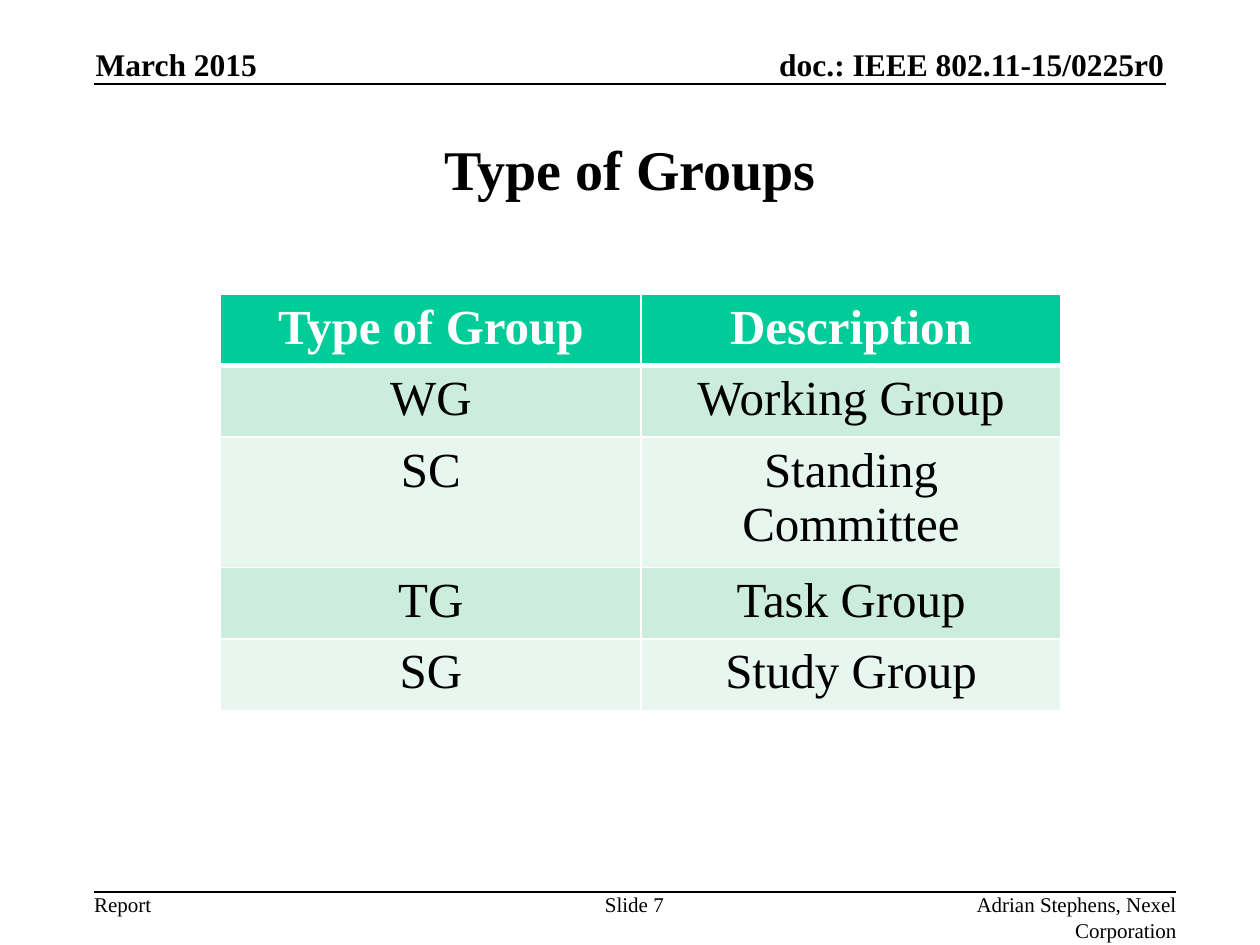
import dataclasses

import pptx
import pptx.dml.color
import pptx.enum.shapes
import pptx.enum.text
import pptx.oxml
import pptx.oxml.ns
import pptx.util

Cm = pptx.util.Cm
Align = pptx.enum.text.PP_ALIGN
Anchor = pptx.enum.text.MSO_ANCHOR


@dataclasses.dataclass(frozen=True)
class Theme:
    font: str = "Times New Roman"
    ink: str = "000000"
    paper: str = "FFFFFF"
    header_fill: str = "00CC99"
    band_fills: tuple = ("CCECDE", "E7F6EF")
    title_size: int = 32
    table_size: int = 28
    header_size: int = 18
    footer_size: int = 12


def rgb(value):
    return pptx.dml.color.RGBColor.from_string(value)


def write_text(frame, text, *, font, size, color, bold=False, align=Align.LEFT):
    paragraph = frame.paragraphs[0]
    paragraph.alignment = align
    run = paragraph.add_run()
    run.text = text
    run.font.name = font
    run.font.size = pptx.util.Pt(size)
    run.font.bold = bold
    run.font.color.rgb = rgb(color)


class SlideBuilder:
    def __init__(self, slide, theme):
        self.slide = slide
        self.theme = theme

    def text(self, text, left, top, width, height, size, *, bold=False,
             align=Align.LEFT, anchor=Anchor.TOP, wrap=False):
        shape = self.slide.shapes.add_textbox(Cm(left), Cm(top), Cm(width), Cm(height))
        frame = shape.text_frame
        frame.word_wrap = wrap
        frame.vertical_anchor = anchor
        frame.margin_left = frame.margin_right = 0
        frame.margin_top = frame.margin_bottom = 0
        write_text(frame, text, font=self.theme.font, size=size,
                   color=self.theme.ink, bold=bold, align=align)

    def rule(self, left, right, top):
        line = self.slide.shapes.add_connector(
            pptx.enum.shapes.MSO_CONNECTOR.STRAIGHT,
            Cm(left), Cm(top), Cm(right), Cm(top))
        line.line.color.rgb = rgb(self.theme.ink)
        line.line.width = pptx.util.Pt(1)
        properties = line._element.spPr
        properties.append(pptx.oxml.parse_xml(
            f"<a:effectLst {pptx.oxml.ns.nsdecls('a')}/>"))

    def cell_borders(self, cell, widths):
        properties = cell._tc.get_or_add_tcPr()
        for position, (side, points) in enumerate(widths.items()):
            properties.insert(position, pptx.oxml.parse_xml(
                f"<a:{side} {pptx.oxml.ns.nsdecls('a')} w='{pptx.util.Pt(points)}'>"
                f"<a:solidFill><a:srgbClr val='{self.theme.paper}'/></a:solidFill>"
                f"</a:{side}>"))

    def table(self, rows, left, top, column_width, row_heights):
        theme = self.theme
        columns = len(rows[0])
        table = self.slide.shapes.add_table(
            len(rows), columns, Cm(left), Cm(top),
            Cm(column_width * columns), Cm(sum(row_heights))).table
        for column in table.columns:
            column.width = Cm(column_width)
        for index, (row, height) in enumerate(zip(rows, row_heights)):
            table.rows[index].height = Cm(height)
            header = index == 0
            fill = theme.header_fill if header else theme.band_fills[(index - 1) % 2]
            for column, text in enumerate(row):
                cell = table.cell(index, column)
                cell.fill.solid()
                cell.fill.fore_color.rgb = rgb(fill)
                self.cell_borders(cell, {"lnL": 1, "lnR": 1,
                                         "lnT": 3 if index == 1 else 1,
                                         "lnB": 3 if header else 1})
                write_text(cell.text_frame, text, font=theme.font,
                           size=theme.table_size, bold=header, align=Align.CENTER,
                           color=theme.paper if header else theme.ink)


presentation = pptx.Presentation()
presentation.slide_width = Cm(25.4)
presentation.slide_height = Cm(19.05)
theme = Theme()
builder = SlideBuilder(
    presentation.slides.add_slide(presentation.slide_layouts[6]), theme)

# Page header
builder.text("March 2015", 1.93, 0.91, 4.39, 0.76, theme.header_size,
             bold=True, anchor=Anchor.BOTTOM)
builder.text("doc.: IEEE 802.11-15/0225r0", 14.35, 0.91, 9.12, 0.76,
             theme.header_size, bold=True, align=Align.RIGHT, anchor=Anchor.BOTTOM)
builder.rule(1.9, 23.5, 1.7)

# Title
builder.text("Type of Groups", 1.9, 1.9, 21.6, 2.97, theme.title_size,
             bold=True, align=Align.CENTER, anchor=Anchor.MIDDLE, wrap=True)

# Table of groups
builder.table(
    [("Type of Group", "Description"),
     ("WG", "Working Group"),
     ("SC", "Standing Committee"),
     ("TG", "Task Group"),
     ("SG", "Study Group")],
    4.45, 5.93, 8.47, [1.35, 1.35, 2.45, 1.35, 1.35])

# Page footer
builder.rule(1.9, 23.7, 17.98)
for text, left, width, align in (
        ("Report", 1.9, 1.17, Align.LEFT),
        ("Slide 7", 12.04, 1.5, Align.CENTER),
        ("Adrian Stephens, Nexel Corporation", 17.7, 6.02, Align.RIGHT)):
    builder.text(text, left, 17.98, width, 0.51, theme.footer_size, align=align)

presentation.save("out.pptx")
